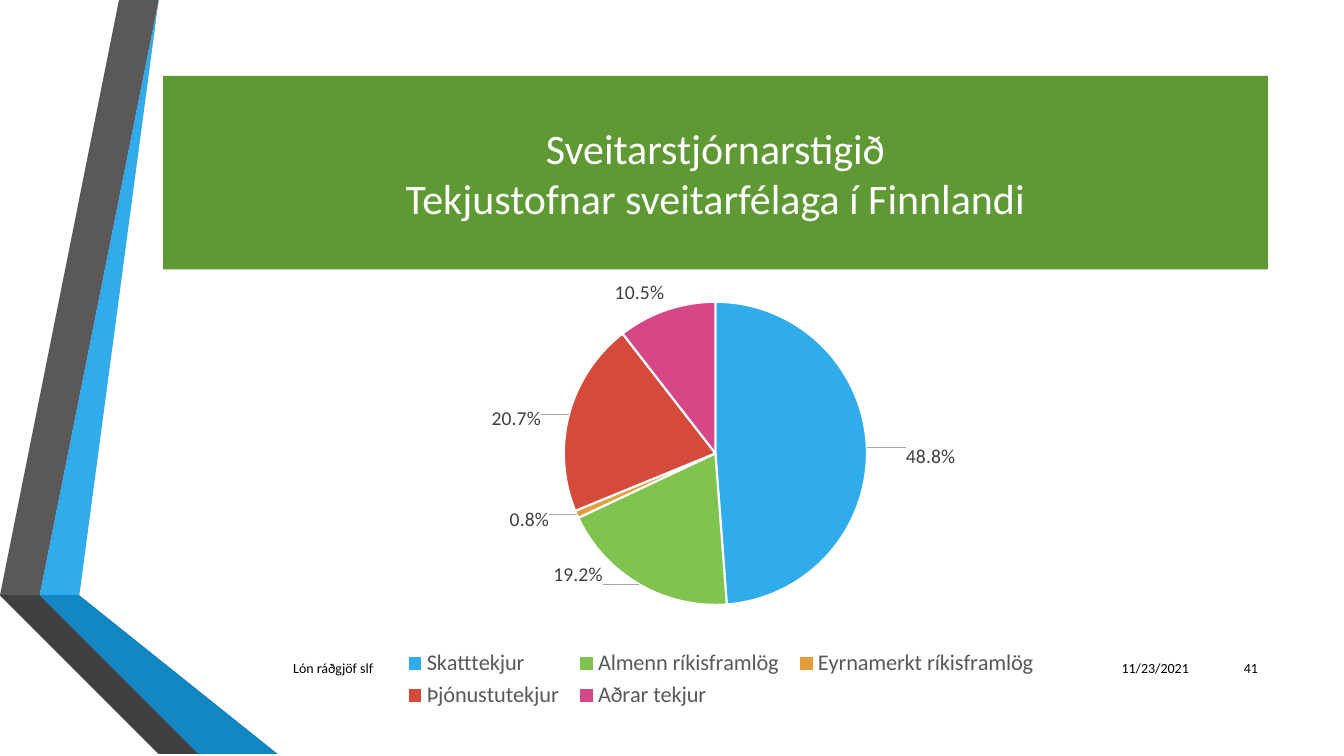
"""Build a slide with a pie chart of municipal revenue sources in Finland."""
from dataclasses import dataclass

from pptx import Presentation, util as u
from pptx.chart import data as cd
from pptx.dml import color as dc
from pptx.enum import chart as ce, text as te
from pptx.oxml import parse_xml


@dataclass(frozen=True)
class Theme:
    face: str = "Calibri"
    head: int = 30
    key: int = 16
    mark: int = 14
    foot: int = 10
    white: str = "FFFFFF"
    black: str = "000000"
    band: str = "5F9934"
    sky: str = "30ACEC"
    blue: str = "1287C3"
    navy: str = "0C5A82"
    grey: str = "595959"
    coal: str = "404040"
    dark: str = "262626"
    rule: str = "A6A6A6"
    pie: tuple = ("30ACEC", "80C34F", "E29D3E", "D64A3B", "D64787")


def put(item, vals):
    for name, val in vals.items():
        setattr(item, name, val)


def style(font, size, tint):
    put(font, {"name": look.face, "size": u.Pt(size), "bold": False})
    font.color.rgb = dc.RGBColor.from_string(tint)


look = Theme()
deck = Presentation()
put(deck, {"slide_width": u.Cm(33.87), "slide_height": u.Cm(19.05)})
slide = deck.slides.add_slide(deck.slide_layouts[5])
items = slide.shapes
title = items.title

base = 19.05
ribs = [
    (look.sky, [(1.27, 14.68), (1.96, 14.81), (4.39, 0), (3.68, 0)]),
    (look.grey, [(3.53, 0), (2.82, 0), (0.41, 14.55), (1.12, 14.66)]),
    (look.dark, [(0.41, 14.55), (3.68, base), (3.84, base)]),
    (look.navy, [(1.27, 14.71), (5.28, base), (5.44, base)]),
    (look.blue, [(1.27, 14.68), (5.44, base), (7.19, base), (1.96, 14.81)]),
    (look.coal, [(5.13, base), (1.12, 14.66), (0.41, 14.55), (3.84, base)]),
]
for tint, spots in ribs:
    pen = items.build_freeform(*spots[0], scale=u.Cm(1))
    pen.add_line_segments(spots[1:])
    rib = pen.convert_to_shape()
    rib.shadow.inherit = False
    rib.fill.solid()
    rib.fill.fore_color.rgb = dc.RGBColor.from_string(tint)
    rib.line.fill.background()

put(title, {"left": u.Cm(4.11), "top": u.Cm(1.91),
            "width": u.Cm(27.84), "height": u.Cm(4.88)})
title.fill.solid()
title.fill.fore_color.rgb = dc.RGBColor.from_string(look.band)
frame = title.text_frame
put(frame, {"text": "Sveitarstjórnarstigið\vTekjustofnar sveitarfélaga í Finnlandi",
            "word_wrap": True, "auto_size": te.MSO_AUTO_SIZE.NONE,
            "vertical_anchor": te.MSO_ANCHOR.MIDDLE})
para = frame.paragraphs[0]
para.alignment = te.PP_ALIGN.CENTER
for run in para.runs:
    style(run.font, look.head, look.white)

feet = [
    ("11/23/2021", 27.03, 16.33, 3.18, te.PP_ALIGN.RIGHT),
    ("Lón ráðgjöf slf", 7.14, 16.33, 19.69, te.PP_ALIGN.LEFT),
    ("41", 30.43, 16.31, 1.52, te.PP_ALIGN.RIGHT),
]
for words, left, top, wide, side in feet:
    box = items.add_textbox(u.Cm(left), u.Cm(top), u.Cm(wide), u.Cm(1.02))
    put(box.text_frame, {"text": words, "word_wrap": True,
                         "vertical_anchor": te.MSO_ANCHOR.MIDDLE})
    para = box.text_frame.paragraphs[0]
    para.alignment = side
    style(para.runs[0].font, look.foot, look.black)

data = cd.CategoryChartData(number_format="0.0%")
data.categories = ["Skatttekjur", "Almenn ríkisframlög", "Eyrnamerkt ríkisframlög",
                   "Þjónustutekjur", "Aðrar tekjur"]
data.add_series("Series 1", [0.488, 0.192, 0.008, 0.207, 0.105])
chart = items.add_chart(ce.XL_CHART_TYPE.PIE, u.Cm(4.11), u.Cm(6.58),
                        u.Cm(27.84), u.Cm(11.4), data).chart
put(chart, {"has_title": False, "has_legend": True})
style(chart.font, look.foot, look.black)
put(chart.legend, {"position": ce.XL_LEGEND_POSITION.BOTTOM,
                   "include_in_layout": False})
style(chart.legend.font, look.key, look.grey)

plot = chart.plots[0]
plot.vary_by_categories = True
row = plot.series[0]
tags = row.data_labels
put(tags, {"show_value": True, "number_format": "0.0%",
           "number_format_is_linked": False,
           "position": ce.XL_LABEL_POSITION.OUTSIDE_END})
style(tags.font, look.mark, look.coal)

space = ('xmlns:c="http://schemas.openxmlformats.org/drawingml/2006/chart" '
         'xmlns:a="http://schemas.openxmlformats.org/drawingml/2006/main"')
shifts = [(0.03, 0.02), (-0.03, -0.06), (-0.02, -0.02), (-0.02, 0.04), (0, 0)]
for num, (tint, (dx, dy)) in enumerate(zip(look.pie, shifts)):
    slice_ = row.points[num]
    slice_.format.fill.solid()
    slice_.format.fill.fore_color.rgb = dc.RGBColor.from_string(tint)
    slice_.format.line.width = u.Pt(1.5)
    slice_.format.line.color.rgb = dc.RGBColor.from_string(look.white)
    tag = slice_.data_label
    style(tag.font, look.mark, look.coal)
    tag.position = ce.XL_LABEL_POSITION.OUTSIDE_END
    if dx:
        node = row._element.xpath(f"c:dLbls/c:dLbl[c:idx/@val='{num}']")[0]
        node.insert(1, parse_xml(
            f'<c:layout {space}><c:manualLayout><c:x val="{dx}"/>'
            f'<c:y val="{dy}"/></c:manualLayout></c:layout>'))

root = chart._chartSpace
root.xpath("c:chart")[0].addnext(parse_xml(
    f'<c:spPr {space}><a:noFill/><a:ln><a:noFill/></a:ln></c:spPr>'))
root.xpath(".//c:showLeaderLines")[0].addnext(parse_xml(
    f'<c:leaderLines {space}><c:spPr><a:ln w="9525"><a:solidFill>'
    f'<a:srgbClr val="{look.rule}"/></a:solidFill></a:ln></c:spPr></c:leaderLines>'))

zones = [("plotArea", '<c:layoutTarget val="inner"/>', 0.36, 0.09, 0.28, 0.67),
         ("legend", "", 0.21, 0.85, 0.59, 0.15)]
for name, aim, *place in zones:
    area = root.xpath(f"c:chart/c:{name}")[0]
    for old in area.xpath("c:layout"):
        area.remove(old)
    sizes = "".join(f'<c:{k} val="{v}"/>' for k, v in zip("xywh", place))
    area.insert(0 if aim else 1, parse_xml(
        f'<c:layout {space}><c:manualLayout>{aim}<c:xMode val="edge"/>'
        f'<c:yMode val="edge"/>{sizes}</c:manualLayout></c:layout>'))

deck.save("out.pptx")
